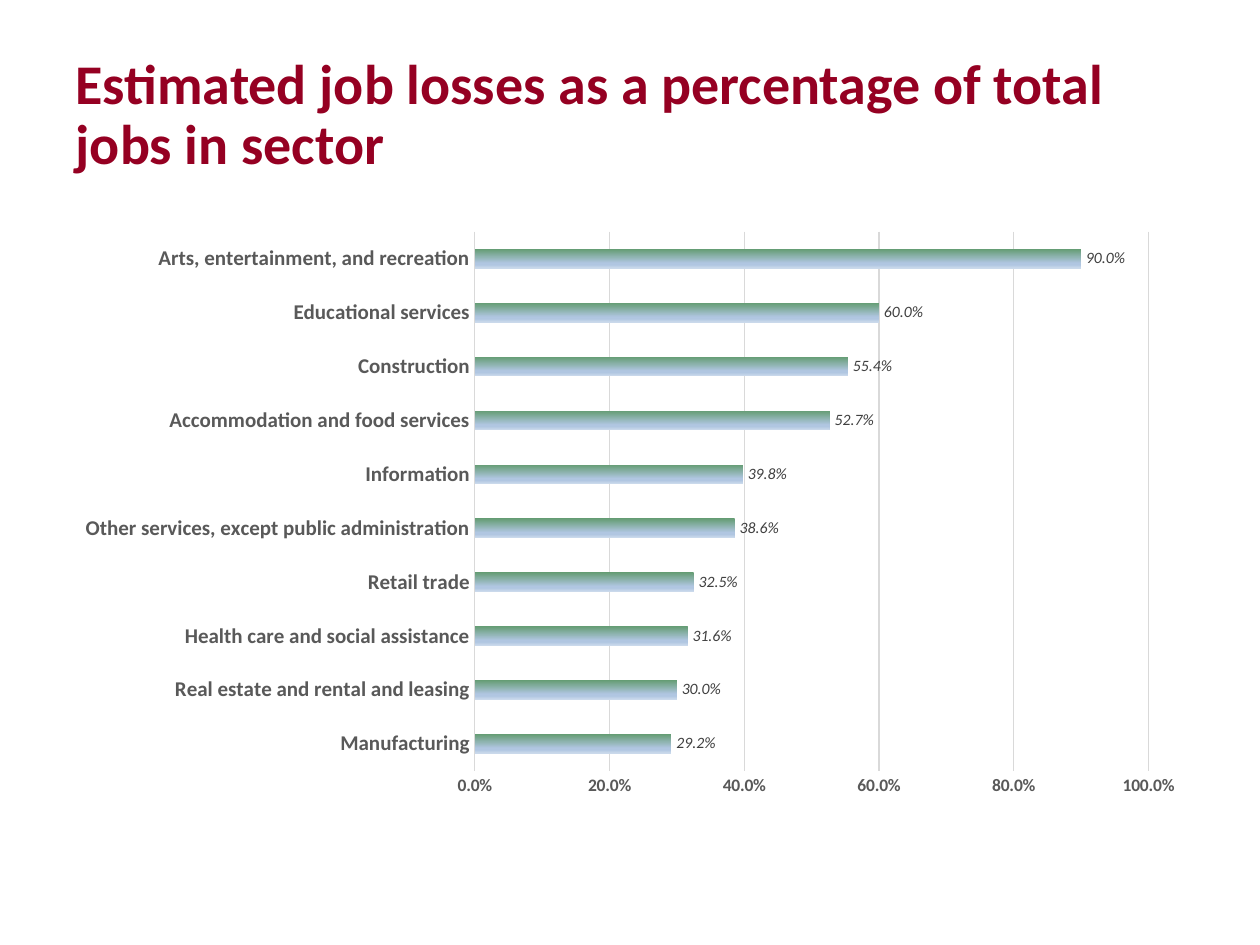
from lxml import etree
from pptx import Presentation
from pptx.chart.data import CategoryChartData
from pptx.dml.color import RGBColor
from pptx.enum.chart import XL_CHART_TYPE, XL_LABEL_POSITION, XL_TICK_MARK
from pptx.enum.text import MSO_ANCHOR, MSO_AUTO_SIZE, PP_ALIGN
from pptx.oxml import parse_xml
from pptx.oxml.ns import nsdecls, qn
from pptx.util import Emu, Pt

PX_PER_INCH = 126
TITLE_ONLY = 5
BAR = XL_CHART_TYPE.BAR_CLUSTERED
OUTSIDE_END = XL_LABEL_POSITION.OUTSIDE_END
NO_TICK = XL_TICK_MARK.NONE
MIDDLE = MSO_ANCHOR.MIDDLE
NO_FIT = MSO_AUTO_SIZE.NONE
LEFT = PP_ALIGN.LEFT

JOB_LOSSES = [
    ("Manufacturing", 0.292),
    ("Real estate and rental and leasing", 0.3),
    ("Health care and social assistance", 0.316),
    ("Retail trade", 0.325),
    ("Other services, except public administration", 0.386),
    ("Information", 0.398),
    ("Accommodation and food services", 0.527),
    ("Construction", 0.554),
    ("Educational services", 0.6),
    ("Arts, entertainment, and recreation", 0.9),
]
BAR_STOPS = [(0, "649C73"), (74, "B0C6E1"), (83, "B0C6E1"), (100, "CAD9EB")]


def px(n):
    return Emu(round(n * 914400 / PX_PER_INCH))


def rgb(color):
    return RGBColor.from_string(color)


class SlideBuilder:
    FONT = "Calibri"
    TITLE = "950022"
    AXIS = "595959"
    LABEL = "404040"
    GRID = "D9D9D9"
    PERCENT = "0.0%"

    def __init__(self, prs):
        self.s = prs.slides.add_slide(prs.slide_layouts[TITLE_ONLY])

    def style(self, font, size, color, bold=False, italic=False):
        font.name = self.FONT
        font.size = Pt(size)
        font.color.rgb = rgb(color)
        font.bold = bold
        font.italic = italic

    def title(self, text, x, y, w, h):
        sp = self.s.shapes.title
        sp.left, sp.top, sp.width, sp.height = px(x), px(y), px(w), px(h)
        tf = sp.text_frame
        tf.text = text
        tf.word_wrap = True
        tf.auto_size = NO_FIT
        tf.vertical_anchor = MIDDLE
        p = tf.paragraphs[0]
        p.alignment = LEFT
        p.line_spacing = 0.9
        self.style(p.font, 32, self.TITLE, bold=True)

    def hairline(self, line):
        line.color.rgb = rgb(self.GRID)
        line.width = Pt(0.75)

    def axis(self, axis, size):
        axis.major_tick_mark = axis.minor_tick_mark = NO_TICK
        self.style(axis.tick_labels.font, size, self.AXIS, bold=True)

    def gradient(self, fill, stops):
        """Fill from top to bottom with any number of stops."""
        fill.gradient()
        fill.gradient_angle = 270
        stop_list = fill.gradient_stops[0]._gs.getparent()
        for gs in list(stop_list):
            stop_list.remove(gs)
        for percent, color in stops:
            gs = parse_xml(f'<a:gs {nsdecls("a")} pos="{percent * 1000}"/>')
            etree.SubElement(gs, qn("a:srgbClr"), val=color)
            stop_list.append(gs)

    def bar_chart(self, rows, stops, x, y, w, h):
        data = CategoryChartData(number_format=self.PERCENT)
        data.categories = [name for name, _ in rows]
        data.add_series("Series 1", [value for _, value in rows])
        chart = self.s.shapes.add_chart(
            BAR, px(x), px(y), px(w), px(h), data).chart
        chart.has_legend = False
        chart.has_title = False
        self.style(chart.font, 10, "000000")

        # Axes
        cat = chart.category_axis
        self.axis(cat, 12)
        cat.has_major_gridlines = False
        self.hairline(cat.format.line)
        val = chart.value_axis
        self.axis(val, 10)
        val.minimum_scale, val.maximum_scale, val.major_unit = 0, 1, 0.2
        val.tick_labels.number_format = self.PERCENT
        val.tick_labels.number_format_is_linked = False
        val.format.line.fill.background()
        val.has_major_gridlines = True
        self.hairline(val.major_gridlines.format.line)

        # Bars and their values
        plot = chart.plots[0]
        plot.gap_width = 182
        plot.vary_by_categories = False
        series = plot.series[0]
        series.invert_if_negative = False
        self.gradient(series.format.fill, stops)
        labels = series.data_labels
        labels.show_value = True
        labels.position = OUTSIDE_END
        labels.number_format = self.PERCENT
        labels.number_format_is_linked = False
        self.style(labels.font, 9, self.LABEL, italic=True)


def main():
    prs = Presentation()
    prs.slide_width, prs.slide_height = px(1260), px(945)
    slide = SlideBuilder(prs)
    slide.title("Estimated job losses as a percentage of total jobs in sector",
                63, 38, 1134, 157)
    slide.bar_chart(JOB_LOSSES, BAR_STOPS, 63, 220, 1134, 587)
    prs.save("out.pptx")


if __name__ == "__main__":
    main()
